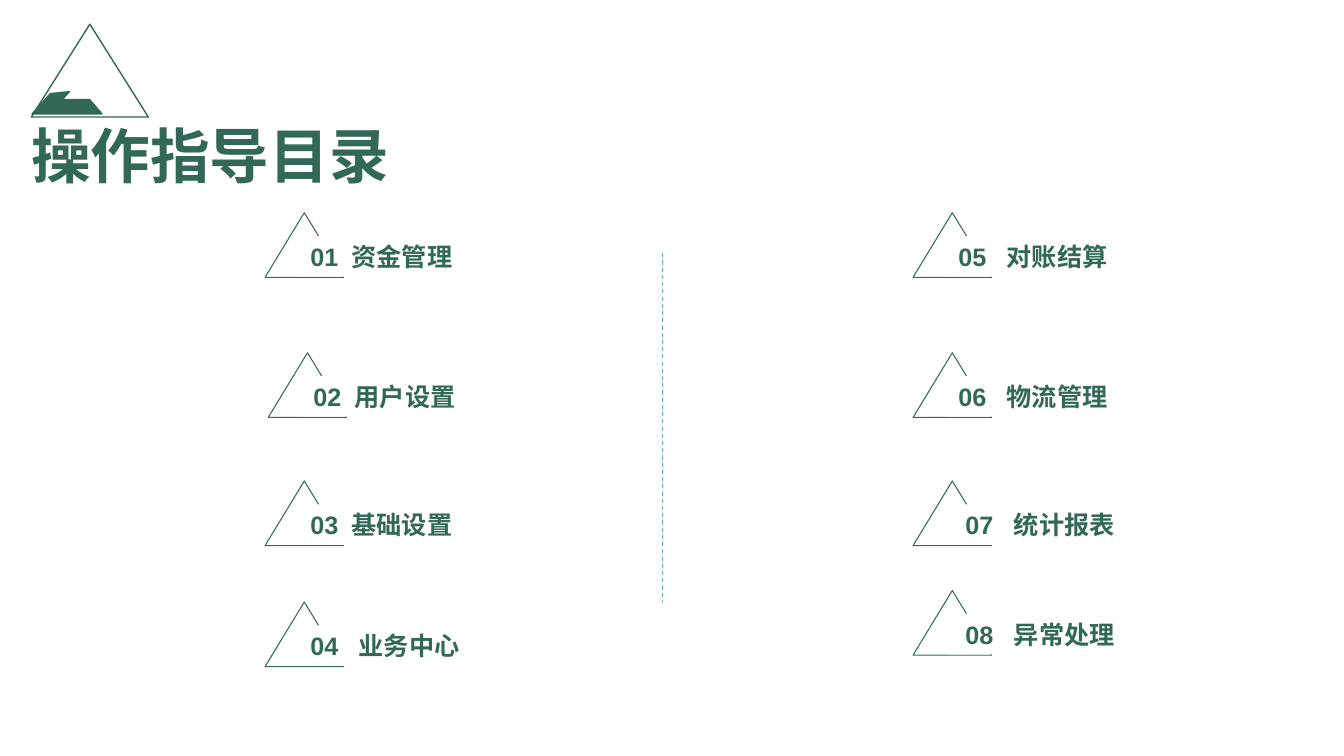
from dataclasses import dataclass

import lxml.etree
import pptx
import pptx.dml.color
import pptx.enum.dml
import pptx.enum.shapes
import pptx.enum.text
import pptx.oxml.ns
import pptx.util
from pptx.util import Cm

SHAPES = pptx.enum.shapes.MSO_SHAPE
qn = pptx.oxml.ns.qn


@dataclass(frozen=True)
class Theme:
    green: pptx.dml.color.RGBColor = pptx.dml.color.RGBColor.from_string("316857")
    teal: pptx.dml.color.RGBColor = pptx.dml.color.RGBColor.from_string("58B6C0")
    white: pptx.dml.color.RGBColor = pptx.dml.color.RGBColor.from_string("FFFFFF")
    latin_font: str = "Arial"
    chinese_font: str = "Noto Sans CJK SC"
    title_size: float = 42.6
    entry_size: float = 18
    thick_line: float = 1
    thin_line: float = 0.75


@dataclass(frozen=True)
class Entry:
    """A numbered line of the contents; lengths in centimetres."""
    number: str
    name: str
    left: float
    top: float
    name_offset: float
    inset: float = 0.25


THEME = Theme()
LEFT_COLUMN, RIGHT_COLUMN = 6.68, 23.01
NARROW, WIDE = 1.04, 1.22
SHIFTED_INSET = 0.43
ENTRIES = [
    Entry("01", "资金管理", LEFT_COLUMN, 5.36, NARROW),
    Entry("02", "用户设置", LEFT_COLUMN + 0.08, 8.89, NARROW),
    Entry("03", "基础设置", LEFT_COLUMN, 12.12, NARROW),
    Entry("04", "业务中心", LEFT_COLUMN, 15.17, WIDE),
    Entry("05", "对账结算", RIGHT_COLUMN, 5.36, WIDE),
    Entry("06", "物流管理", RIGHT_COLUMN, 8.89, WIDE),
    Entry("07", "统计报表", RIGHT_COLUMN, 12.12, WIDE, SHIFTED_INSET),
    Entry("08", "异常处理", RIGHT_COLUMN, 14.88, WIDE, SHIFTED_INSET),
]
MOUNTAIN = [(0.81, 2.87), (1.27, 2.36), (1.75, 2.31),
            (1.57, 2.51), (2.26, 2.51), (2.57, 2.87)]


def format_text(paragraph, size: float, latin_font: str) -> None:
    paragraph.alignment = pptx.enum.text.PP_ALIGN.LEFT
    for run in paragraph.runs:
        run.font.size = pptx.util.Pt(size)
        run.font.bold = True
        run.font.name = latin_font
        run.font.color.rgb = THEME.green
        east_asian = lxml.etree.SubElement(run.font._element, qn("a:ea"))
        east_asian.set("typeface", THEME.chinese_font)


def outline(shape, width: float) -> None:
    shape.shadow.inherit = False
    shape.line.color.rgb = THEME.green
    shape.line.width = pptx.util.Pt(width)


def add_triangle(shapes, left: float, top: float, width: float,
                 height: float, line_width: float) -> None:
    triangle = shapes.add_shape(SHAPES.ISOSCELES_TRIANGLE,
                                Cm(left), Cm(top), Cm(width), Cm(height))
    triangle.fill.background()
    outline(triangle, line_width)


def add_title(slide) -> None:
    title = slide.shapes.title
    title.left, title.top, title.width, title.height = Cm(0.53), Cm(2.87), Cm(9.55), Cm(2.08)
    text_frame = title.text_frame
    text_frame.text = "操作指导目录"
    text_frame.word_wrap = False
    text_frame.auto_size = pptx.enum.text.MSO_AUTO_SIZE.SHAPE_TO_FIT_TEXT
    text_frame.vertical_anchor = pptx.enum.text.MSO_ANCHOR.TOP
    format_text(text_frame.paragraphs[0], THEME.title_size, THEME.chinese_font)


def add_emblem(slide) -> None:
    points = [(Cm(x), Cm(y)) for x, y in MOUNTAIN]
    builder = slide.shapes.build_freeform(*points[0])
    builder.add_line_segments(points[1:], close=True)
    mountain = builder.convert_to_shape()
    mountain.fill.solid()
    mountain.fill.fore_color.rgb = THEME.green
    outline(mountain, THEME.thick_line)
    add_triangle(slide.shapes, 0.79, 0.61, 2.95, 2.34, THEME.thick_line)


def add_divider(slide) -> None:
    divider = slide.shapes.add_connector(pptx.enum.shapes.MSO_CONNECTOR.STRAIGHT,
                                         Cm(16.69), Cm(6.38), Cm(16.69), Cm(15.16))
    divider.line.color.rgb = THEME.teal
    divider.line.width = pptx.util.Pt(THEME.thin_line)
    divider.line.dash_style = pptx.enum.dml.MSO_LINE.DASH
    lxml.etree.SubElement(divider._element.spPr, qn("a:effectLst"))


def add_entry(slide, entry: Entry) -> None:
    group = slide.shapes.add_group_shape()
    add_triangle(group.shapes, entry.left, entry.top, 1.98, 1.63, THEME.thin_line)

    # The white label hides the lower right of the triangle
    label = group.shapes.add_shape(SHAPES.RECTANGLE, Cm(entry.left + 0.89),
                                   Cm(entry.top + 0.59), Cm(6.05), Cm(1.02))
    label.shadow.inherit = False
    label.fill.solid()
    label.fill.fore_color.rgb = THEME.white
    label.line.fill.background()

    text_frame = label.text_frame
    text_frame.word_wrap = True
    text_frame.auto_size = pptx.enum.text.MSO_AUTO_SIZE.SHAPE_TO_FIT_TEXT
    text_frame.vertical_anchor = pptx.enum.text.MSO_ANCHOR.TOP
    text_frame.margin_left = Cm(entry.inset)
    paragraph = text_frame.paragraphs[0]
    paragraph.text = f"{entry.number}\t{entry.name}"
    properties = paragraph._element.get_or_add_pPr()
    tab_list = lxml.etree.SubElement(properties, qn("a:tabLst"))
    lxml.etree.SubElement(tab_list, qn("a:tab"),
                          pos=str(Cm(entry.name_offset)), algn="l")
    format_text(paragraph, THEME.entry_size, THEME.latin_font)


def main() -> None:
    presentation = pptx.Presentation()
    presentation.slide_width, presentation.slide_height = Cm(33.87), Cm(19.05)
    title_only = presentation.slide_layouts[5]
    slide = presentation.slides.add_slide(title_only)

    # Heading
    add_emblem(slide)
    add_title(slide)

    # Contents in two columns
    add_divider(slide)
    for entry in ENTRIES:
        add_entry(slide, entry)

    presentation.save("out.pptx")


if __name__ == "__main__":
    main()
